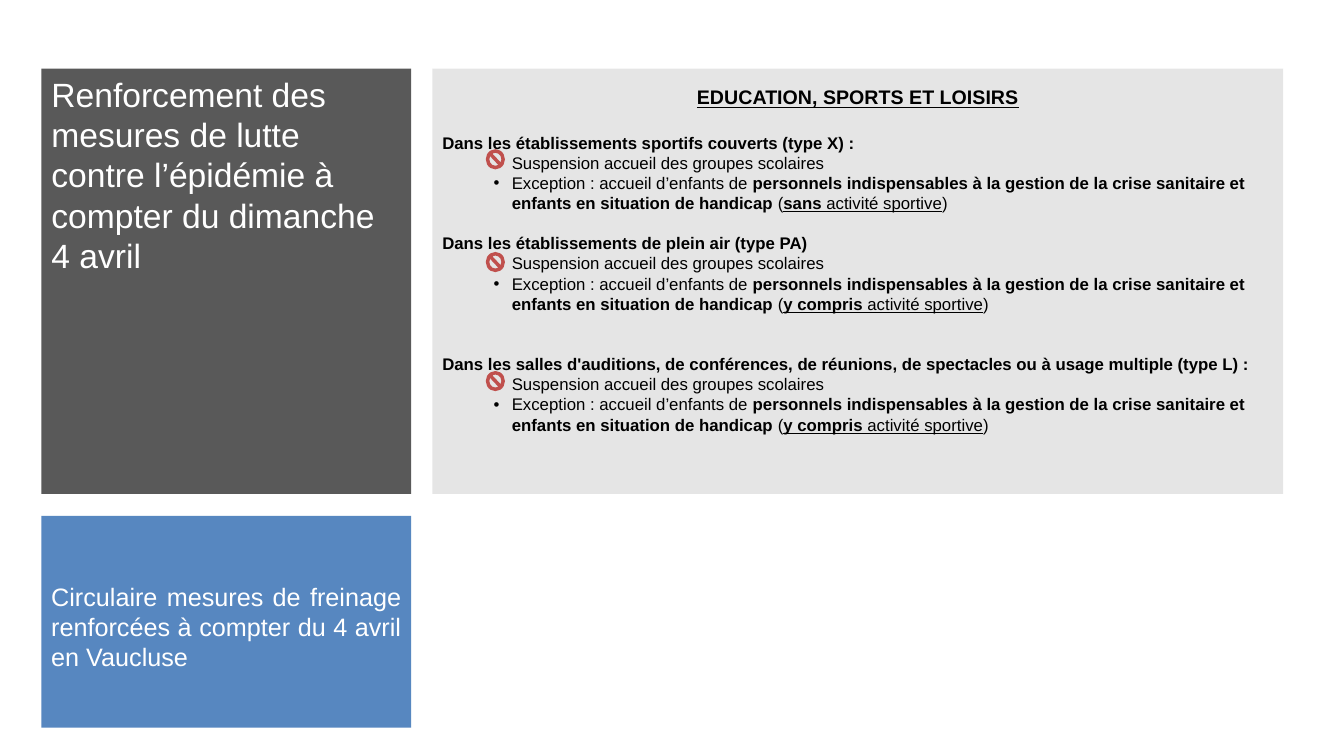
from dataclasses import dataclass

from lxml import etree
from pptx import Presentation
from pptx import util as u
from pptx.dml.color import RGBColor
from pptx.enum import shapes, text
from pptx.oxml.ns import qn


@dataclass(frozen=True)
class Theme:
    font: str = "Arial"
    dark: str = "595959"
    blue: str = "4F81BD"
    grey: str = "808080"
    red: str = "C0504D"
    white: str = "FFFFFF"
    black: str = "000000"
    title_size: int = 24
    source_size: int = 18
    heading_size: int = 14
    body_size: int = 12


class SlideBuilder:
    def __init__(self, slide, theme):
        self.slide = slide
        self.theme = theme

    def place(self, shape, left, top, width, height):
        shape.left, shape.top = u.Pt(left), u.Pt(top)
        shape.width, shape.height = u.Pt(width), u.Pt(height)

    def paint(self, shape, color, opacity=100):
        shape.fill.solid()
        shape.fill.fore_color.rgb = RGBColor.from_string(color)
        if opacity < 100:
            srgb = shape.element.spPr.find(".//" + qn("a:srgbClr"))
            etree.SubElement(srgb, qn("a:alpha"), val=str(opacity * 1000))

    def set_frame(self, shape, inset_top=3.6):
        frame = shape.text_frame
        frame.word_wrap = True
        frame.auto_size = text.MSO_AUTO_SIZE.NONE
        frame.vertical_anchor = text.MSO_ANCHOR.TOP
        frame.margin_left = frame.margin_right = u.Pt(7.2)
        frame.margin_top, frame.margin_bottom = u.Pt(inset_top), u.Pt(3.6)
        return frame

    def style(self, run, size, color, bold=False, underline=False):
        font = run.font
        font.name, font.size = self.theme.font, u.Pt(size)
        font.bold, font.underline = bold, underline
        font.color.rgb = RGBColor.from_string(color)

    def title(self, wording, box):
        title = self.slide.shapes.title
        self.place(title, *box)
        self.paint(title, self.theme.dark)
        paragraph = self.set_frame(title).paragraphs[0]
        paragraph.text = wording
        paragraph.alignment = text.PP_ALIGN.LEFT
        self.style(paragraph.runs[0], self.theme.title_size, self.theme.white)

    def shape(self, kind, box, color, opacity=100):
        shape = self.slide.shapes.add_shape(kind, *map(u.Pt, box))
        shape.shadow.inherit = False
        shape.line.fill.background()
        self.paint(shape, color, opacity)
        return shape

    def panel(self, box, color, opacity, inset_top=3.6):
        panel = self.shape(shapes.MSO_SHAPE.RECTANGLE, box, color, opacity)
        return self.set_frame(panel, inset_top)

    def add_parts(self, paragraph, parts, size, color, align=text.PP_ALIGN.LEFT):
        """Each part is (wording, bold, underline)."""
        paragraph.alignment = align
        for wording, bold, underline in parts:
            run = paragraph.add_run()
            run.text = wording
            self.style(run, size, color, bold, underline)

    def body_line(self, frame, parts, before=0):
        paragraph = frame.add_paragraph()
        paragraph.space_before = u.Pt(before)
        self.add_parts(paragraph, parts, self.theme.body_size, self.theme.black)
        return paragraph

    def indent(self, paragraph, left, hanging=0, bullet=None):
        p_pr = paragraph._p.get_or_add_pPr()
        p_pr.set("marL", str(u.Pt(left)))
        p_pr.set("indent", str(-u.Pt(hanging)))
        if bullet:
            etree.SubElement(p_pr, qn("a:buFont"), typeface=self.theme.font)
            etree.SubElement(p_pr, qn("a:buChar"), char=bullet)

    def ban_sign(self, top):
        self.shape(shapes.MSO_SHAPE.NO_SYMBOL, (347, top, 13.7, 14.4), self.theme.red)


LEFT, TOP, SIDE_WIDTH, MAIN_HEIGHT = 29.5, 49, 264.2, 303.8
TEXT_INDENT = 49.6

# Heading, space before it, activity rule, top of its ban sign
VENUES = [
    ("Dans les établissements sportifs couverts (type X) :", 16.7, "sans", " activité sportive", 106.6),
    ("Dans les établissements de plein air (type PA)", 14.4, "y compris ", "activité sportive", 180),
    ("Dans les salles d'auditions, de conférences, de réunions, de spectacles ou à usage multiple (type L) :",
     28.7, "y compris ", "activité sportive", 265),
]


def main():
    deck = Presentation()
    deck.slide_width, deck.slide_height = u.Pt(960), u.Pt(540)
    theme = Theme()
    builder = SlideBuilder(deck.slides.add_slide(deck.slide_layouts[5]), theme)

    # Title block
    builder.title("Renforcement des mesures de lutte contre l’épidémie à compter du dimanche 4 avril",
                  (LEFT, TOP, SIDE_WIDTH, MAIN_HEIGHT))

    # Source document
    circular = builder.panel((LEFT, 368.6, SIDE_WIDTH, 151.2), theme.blue, 95, inset_top=46.6)
    builder.add_parts(circular.paragraphs[0],
                      [("Circulaire mesures de freinage renforcées à compter du 4 avril en Vaucluse", False, False)],
                      theme.source_size, theme.white, text.PP_ALIGN.JUSTIFY)

    # Measures by type of venue
    measures = builder.panel((308.9, TOP, 607.7, MAIN_HEIGHT), theme.grey, 20)
    heading = measures.paragraphs[0]
    heading.line_spacing = 1.5
    builder.add_parts(heading, [("EDUCATION, SPORTS ET LOISIRS", True, True)],
                      theme.heading_size, theme.black, text.PP_ALIGN.CENTER)

    for venue, before, rule, activity, sign_top in VENUES:
        builder.body_line(measures, [(venue, True, False)], before)
        suspension = builder.body_line(measures, [("Suspension accueil des groupes scolaires", False, False)])
        builder.indent(suspension, TEXT_INDENT)
        exception = builder.body_line(measures, [
            ("Exception : accueil d’enfants de ", False, False),
            ("personnels indispensables à la gestion de la crise sanitaire et enfants en situation de handicap",
             True, False),
            (" (", False, False),
            (rule, True, True),
            (activity, False, True),
            (")", False, False),
        ])
        exception.level = 1
        builder.indent(exception, TEXT_INDENT, 13, "•")
        builder.ban_sign(sign_top)

    deck.save("out.pptx")


if __name__ == "__main__":
    main()
